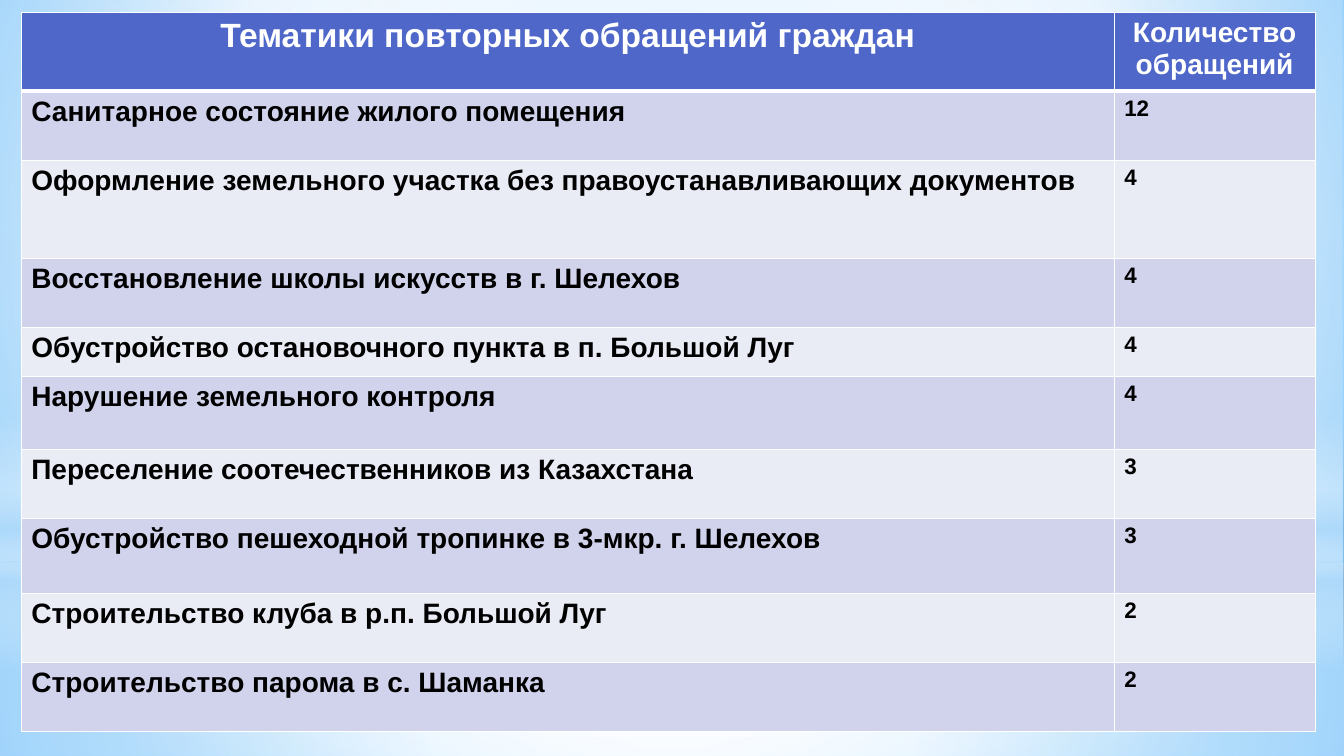
"""Builds a slide with a table of repeated citizen appeals by topic."""
from lxml.etree import SubElement
from pptx import Presentation
from pptx.dml.color import RGBColor
from pptx.enum.shapes import MSO_SHAPE
from pptx.enum.text import PP_ALIGN
from pptx.oxml.ns import qn
from pptx.util import Pt

WHITE = RGBColor(0xFF, 0xFF, 0xFF)
BLACK = RGBColor(0x00, 0x00, 0x00)
HEADER = RGBColor(0x4E, 0x67, 0xC8)
BANDS = (RGBColor(0xD0, 0xD3, 0xEB), RGBColor(0xE9, 0xEB, 0xF5))
SKY = RGBColor(0x9E, 0xD5, 0xFF)
DEEP_SKY = RGBColor(0x5B, 0xB9, 0xFF)
PALE = RGBColor(0xB4, 0xDC, 0xFA)
WIDTH, HEIGHT = 960, 540
CENTRE = (50, 50, 50, 50)

GLOWS = [
    (MSO_SHAPE.RECTANGLE, 402, 138, CENTRE,
     [(0, WHITE, 91), (37, WHITE, 76), (100, PALE, 79)]),
    (MSO_SHAPE.RECTANGLE, 0, 402, CENTRE,
     [(0, WHITE, 89), (48, WHITE, 62), (100, PALE, 79)]),
    (MSO_SHAPE.RECTANGLE, 297, 180, None,
     [(0, WHITE, 0), (29, WHITE, 30), (45, PALE, 40),
      (55, WHITE, 26), (65, PALE, 60), (100, WHITE, 0)]),
    (MSO_SHAPE.OVAL, 126, 402, CENTRE, [(0, WHITE, 100), (56, WHITE, 0)]),
]

HEADINGS = ("Тематики повторных обращений граждан", "Количество обращений")
APPEALS = [
    ("Санитарное состояние жилого помещения", 12, 49.3),
    ("Оформление земельного участка без правоустанавливающих документов", 4, 70),
    ("Восстановление школы искусств в г. Шелехов", 4, 49.3),
    ("Обустройство остановочного пункта в п. Большой Луг", 4, 35),
    ("Нарушение земельного контроля", 4, 52.2),
    ("Переселение соотечественников из Казахстана", 3, 49.3),
    ("Обустройство пешеходной тропинке в 3-мкр. г. Шелехов", 3, 53.5),
    ("Строительство клуба в р.п. Большой Луг", 2, 49.3),
    ("Строительство парома в с. Шаманка", 2, 49.3),
]


class SlideBuilder:
    """Holds the text style and the current slide."""

    def __init__(self, page, font_name):
        self.page = page
        self.font_name = font_name

    def gradient(self, fill, stops, focus):
        """Turn a solid fill element into a gradient, radial if focus is given."""
        grad = fill.makeelement(qn("a:gradFill"), {"rotWithShape": "1"})
        stop_list = SubElement(grad, qn("a:gsLst"))
        for position, color, opacity in stops:
            stop = SubElement(stop_list, qn("a:gs"), pos=str(position * 1000))
            tone = SubElement(stop, qn("a:srgbClr"), val=str(color))
            if opacity < 100:
                SubElement(tone, qn("a:alpha"), val=str(opacity * 1000))
        if focus:
            radial = SubElement(grad, qn("a:path"), path="circle")
            sides = {side: str(share * 1000) for side, share in zip("ltrb", focus)}
            SubElement(radial, qn("a:fillToRect"), sides)
        else:
            SubElement(grad, qn("a:lin"), ang="5400000", scaled="0")
        fill.getparent().replace(fill, grad)

    def background(self, stops, focus):
        """Give the slide a gradient background."""
        fill = self.page.background.fill
        fill.solid()
        fill.fore_color.rgb = WHITE
        solid = self.page.element.find(".//" + qn("p:bgPr") + "/" + qn("a:solidFill"))
        self.gradient(solid, stops, focus)

    def glow(self, kind, top, height, focus, stops):
        """Add a soft gradient shape across the full slide width."""
        shape = self.page.shapes.add_shape(kind, 0, Pt(top), Pt(WIDTH), Pt(height))
        shape.shadow.inherit = False
        shape.line.fill.background()
        shape.fill.solid()
        shape.fill.fore_color.rgb = WHITE
        self.gradient(shape.element.spPr.find(qn("a:solidFill")), stops, focus)

    def table(self, left, top, widths, heights):
        """Add an empty table with the given column widths and row heights."""
        frame = self.page.shapes.add_table(
            len(heights), len(widths), Pt(left), Pt(top), Pt(sum(widths)), Pt(sum(heights)))
        for column, width in zip(frame.table.columns, widths):
            column.width = Pt(width)
        for row, height in zip(frame.table.rows, heights):
            row.height = Pt(height)
        return frame.table

    def cell(self, cell, text, size, fill, color=BLACK, align=PP_ALIGN.LEFT, borders=(1, 1, 1, 1)):
        """Fill one cell with bold text and draw its left, right, top, bottom borders."""
        cell.fill.solid()
        cell.fill.fore_color.rgb = fill
        para = cell.text_frame.paragraphs[0]
        para.text = text
        para.alignment = align
        para.font.name = self.font_name
        para.font.size = Pt(size)
        para.font.bold = True
        para.font.color.rgb = color
        properties = cell._tc.get_or_add_tcPr()
        for index, (side, width) in enumerate(zip("LRTB", borders)):
            line = properties.makeelement(qn("a:ln" + side), {"w": str(Pt(width))})
            solid = SubElement(line, qn("a:solidFill"))
            SubElement(solid, qn("a:srgbClr"), val=str(WHITE))
            properties.insert(index, line)


def main():
    deck = Presentation()
    deck.slide_width, deck.slide_height = Pt(WIDTH), Pt(HEIGHT)
    builder = SlideBuilder(deck.slides.add_slide(deck.slide_layouts[6]), "Arial")
    builder.background([(0, SKY, 100), (60, WHITE, 100), (100, DEEP_SKY, 100)], (20, 10, 20, 60))
    for glow in GLOWS:
        builder.glow(*glow)

    heights = [56.3] + [height for _, _, height in APPEALS]
    table = builder.table(15.2, 8.9, (780.7, 143.5), heights)
    for column, (heading, size) in enumerate(zip(HEADINGS, (24, 20))):
        builder.cell(table.cell(0, column), heading, size, HEADER, WHITE,
                     PP_ALIGN.CENTER, (1, 1, 1, 3))
    for row, (topic, count, _) in enumerate(APPEALS, start=1):
        band = BANDS[(row - 1) % 2]
        borders = (1, 1, 3 if row == 1 else 1, 1)
        builder.cell(table.cell(row, 0), topic, 20, band, borders=borders)
        builder.cell(table.cell(row, 1), str(count), 16, band, borders=borders)
    deck.save("out.pptx")


if __name__ == "__main__":
    main()
